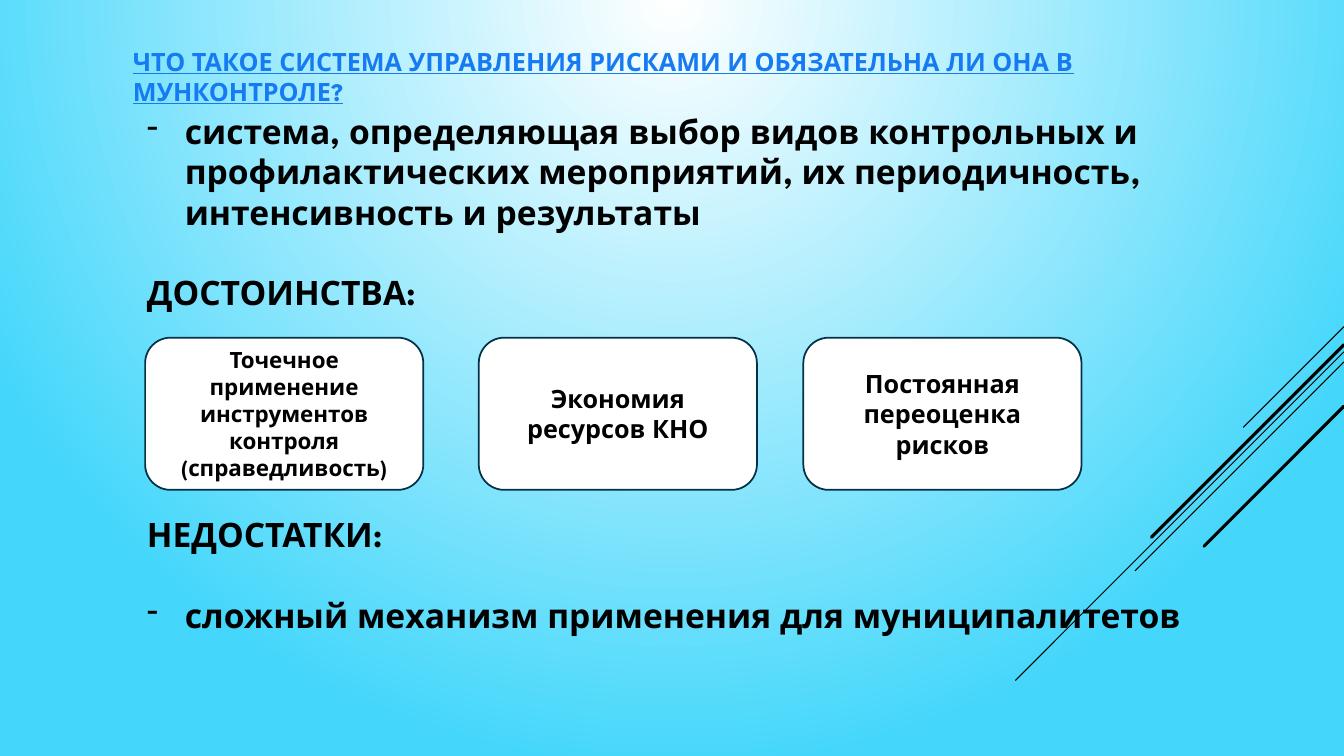
from dataclasses import dataclass

from lxml.etree import SubElement
from pptx import Presentation
from pptx.dml.color import RGBColor
from pptx.enum.shapes import MSO_CONNECTOR, MSO_SHAPE
from pptx.enum.text import MSO_ANCHOR, MSO_AUTO_SIZE, PP_ALIGN
from pptx.oxml.ns import qn
from pptx.slide import Slide
from pptx.text.text import TextFrame, _Paragraph
from pptx.util import Pt

COLORS = {
    "sky": "45D7FB",
    "white": "FFFFFF",
    "black": "000000",
    "heading": "167BF3",
    "card_edge": "043148",
}
SLIDE_WIDTH, SLIDE_HEIGHT = 960, 540
LINE_PITCH = 28.8
HANGING_INDENT = 27
CARD_TOP, CARD_WIDTH, CARD_HEIGHT = 241.2, 198.72, 108.72


@dataclass(frozen=True)
class Ray:
    """A 45-degree line running down and left from the right edge."""
    start_y: float
    reach: float
    weight: float


@dataclass(frozen=True)
class Statement:
    text: str
    lines_before: int = 0
    dashed: bool = False


@dataclass(frozen=True)
class Card:
    left: float
    text: str
    size: float = 18


RAYS = [
    Ray(233.3, 72, 0.75),
    Ray(251.3, 234.7, 0.75),
    Ray(258.5, 149.3, 0.75),
    Ray(246.2, 137.5, 2.25),
    Ray(290.2, 100, 2.25),
]
HEADING = [Statement("ЧТО ТАКОЕ СИСТЕМА УПРАВЛЕНИЯ РИСКАМИ И ОБЯЗАТЕЛЬНА ЛИ ОНА В МУНКОНТРОЛЕ?")]
STATEMENTS = [
    Statement("система, определяющая выбор видов контрольных и профилактических "
              "мероприятий, их периодичность, интенсивность и результаты", dashed=True),
    Statement("ДОСТОИНСТВА:", lines_before=1),
    Statement("НЕДОСТАТКИ:", lines_before=5),
    Statement("сложный механизм применения для муниципалитетов", lines_before=1, dashed=True),
]
CARDS = [
    Card(103.68, "Точечное применение инструментов контроля (справедливость)", 16),
    Card(342, "Экономия ресурсов КНО"),
    Card(573.84, "Постоянная переоценка рисков"),
]


def color(name: str) -> RGBColor:
    return RGBColor.from_string(COLORS[name])


def write(paragraph: _Paragraph, text: str, size: float,
          color_name: str = "black", underline: bool = False) -> None:
    run = paragraph.add_run()
    run.text = text
    font_format = {"name": "League Spartan", "size": Pt(size), "bold": True}
    if underline:
        font_format["underline"] = True
    for attribute, value in font_format.items():
        setattr(run.font, attribute, value)
    run.font.color.rgb = color(color_name)


def add_dash(paragraph: _Paragraph) -> None:
    properties = paragraph._p.get_or_add_pPr()
    properties.set("marL", str(Pt(HANGING_INDENT)))
    properties.set("indent", str(-Pt(HANGING_INDENT)))
    SubElement(properties, qn("a:buFontTx"))
    SubElement(properties, qn("a:buChar"), char="-")


def paint_background(slide: Slide) -> None:
    """Fill with a radial gradient centred on the top edge."""
    fill = slide.background.fill
    fill.gradient()
    for stop, name, position in zip(fill.gradient_stops, ("white", "sky"), (0, 1)):
        stop.color.rgb = color(name)
        stop.position = position
    gradient = slide.background._cSld.find(".//" + qn("a:gradFill"))
    gradient.remove(gradient.find(qn("a:lin")))
    circle = SubElement(gradient, qn("a:path"), path="circle")
    SubElement(circle, qn("a:fillToRect"), l="0", t="0", r="0", b="100000")


def add_ray(slide: Slide, ray: Ray) -> None:
    connector = slide.shapes.add_connector(
        MSO_CONNECTOR.STRAIGHT, Pt(SLIDE_WIDTH), Pt(ray.start_y),
        Pt(SLIDE_WIDTH - ray.reach), Pt(ray.start_y + ray.reach))
    connector.line.color.rgb = color("black")
    connector.line.width = Pt(ray.weight)
    if ray.weight > 1:
        connector.line._get_or_add_ln().set("cap", "rnd")
    SubElement(connector._element.spPr, qn("a:effectLst"))


def add_statements(slide: Slide, bounds: tuple[float, float, float, float],
                   statements: list[Statement], size: float,
                   color_name: str = "black", underline: bool = False) -> None:
    frame: TextFrame = slide.shapes.add_textbox(*map(Pt, bounds)).text_frame
    frame.word_wrap = True
    frame.auto_size = MSO_AUTO_SIZE.SHAPE_TO_FIT_TEXT
    for index, statement in enumerate(statements):
        paragraph = frame.add_paragraph() if index else frame.paragraphs[0]
        if statement.lines_before:
            paragraph.space_before = Pt(statement.lines_before * LINE_PITCH)
        if statement.dashed:
            add_dash(paragraph)
        write(paragraph, statement.text, size, color_name, underline)


def add_card(slide: Slide, card: Card) -> None:
    box = slide.shapes.add_shape(
        MSO_SHAPE.ROUNDED_RECTANGLE, Pt(card.left), Pt(CARD_TOP),
        Pt(CARD_WIDTH), Pt(CARD_HEIGHT))
    box.shadow.inherit = False
    box.fill.solid()
    box.fill.fore_color.rgb = color("white")
    box.line.color.rgb = color("card_edge")
    box.line.width = Pt(1.25)
    frame_format = {"word_wrap": True, "vertical_anchor": MSO_ANCHOR.MIDDLE}
    for attribute, value in frame_format.items():
        setattr(box.text_frame, attribute, value)
    paragraph = box.text_frame.paragraphs[0]
    paragraph.alignment = PP_ALIGN.CENTER
    write(paragraph, card.text, card.size)


def main() -> None:
    presentation = Presentation()
    presentation.slide_width = Pt(SLIDE_WIDTH)
    presentation.slide_height = Pt(SLIDE_HEIGHT)
    slide = presentation.slides.add_slide(presentation.slide_layouts[6])
    paint_background(slide)
    for ray in RAYS:
        add_ray(slide, ray)
    add_statements(slide, (87.84, 29.52, 810.72, 28.8), HEADING, 18, "heading", underline=True)
    add_statements(slide, (97.92, 75.6, 784.08, 385.2), STATEMENTS, 24)
    for card in CARDS:
        add_card(slide, card)
    presentation.save("out.pptx")


if __name__ == "__main__":
    main()
